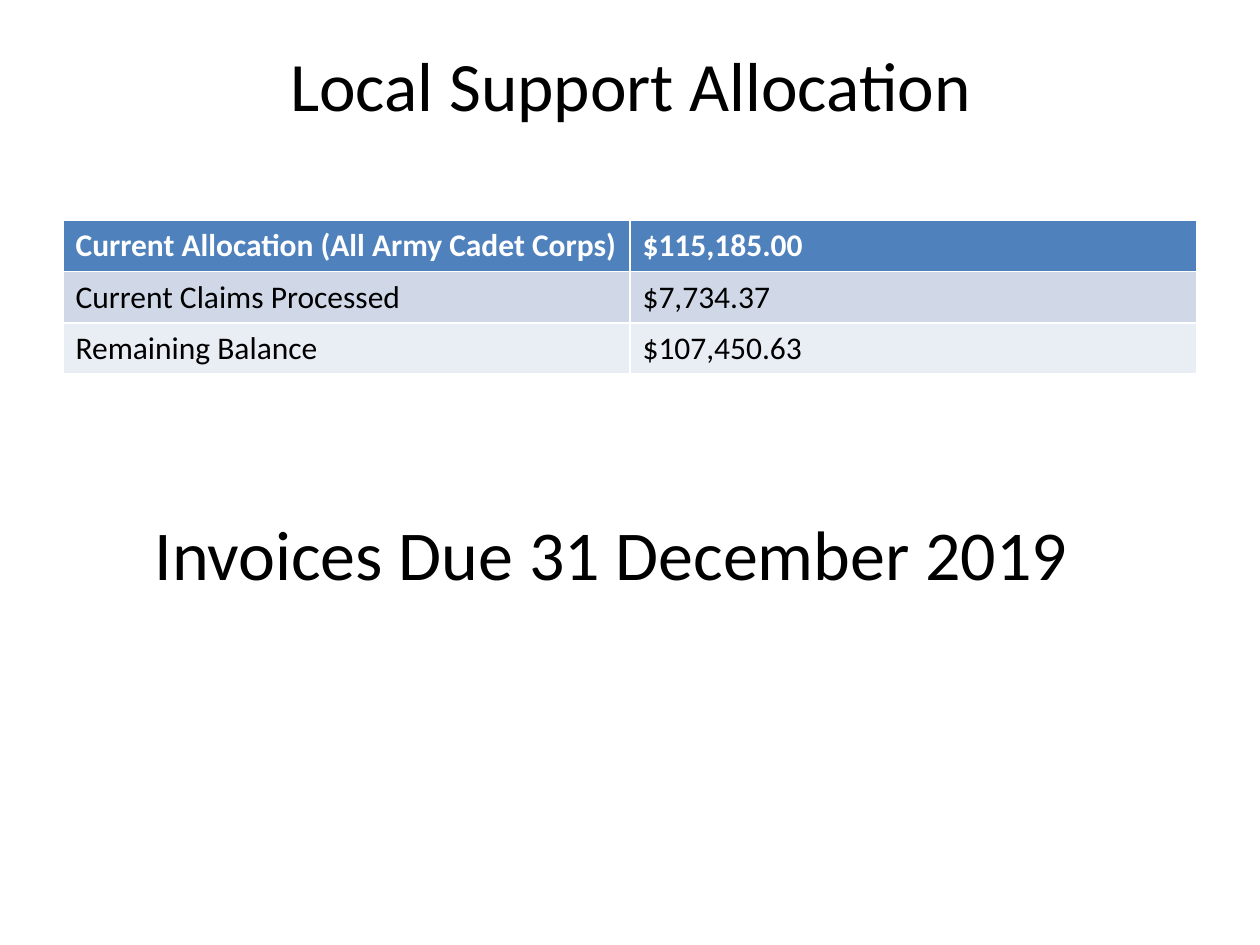
"""Build the Local Support Allocation slide with its balance table and invoice deadline."""
from pptx import Presentation
from pptx import util as u
from pptx.dml import color
from pptx.enum import text

COLORS = {
    "header": "4F81BD",
    "claims": "D0D8E8",
    "balance": "E9EDF4",
    "white": "FFFFFF",
    "black": "000000",
}
ROWS = [
    ("header", "white", ["Current Allocation (All Army Cadet Corps)", "$115,185.00"]),
    ("claims", "black", ["Current Claims Processed", "$7,734.37"]),
    ("balance", "black", ["Remaining Balance", "$107,450.63"]),
]


def add_text(paragraph, wording, size, color_name, bold=False):
    run = paragraph.add_run()
    run.text = wording
    run.font.name = "Calibri"
    run.font.size = u.Pt(size)
    run.font.bold = bold
    run.font.color.rgb = color.RGBColor.from_string(COLORS[color_name])


presentation = Presentation()
presentation.slide_width = u.Inches(10)
presentation.slide_height = u.Inches(7.5)
slide = presentation.slides.add_slide(presentation.slide_layouts[5])

title = slide.shapes.title
title.left, title.top = u.Inches(0.03), u.Inches(0.33)
title.width, title.height = u.Inches(9.83), u.Inches(0.67)
title.text_frame.vertical_anchor = text.MSO_ANCHOR.MIDDLE
title.text_frame.auto_size = text.MSO_AUTO_SIZE.NONE
title_paragraph = title.text_frame.paragraphs[0]
title_paragraph.alignment = text.PP_ALIGN.CENTER
add_text(title_paragraph, " Local Support Allocation", 39.6, "black")

table = slide.shapes.add_table(
    len(ROWS), 2, u.Inches(0.5), u.Inches(1.75), u.Inches(9), u.Inches(1.22)
).table
for row_index, (fill_name, color_name, wordings) in enumerate(ROWS):
    for column_index, wording in enumerate(wordings):
        cell = table.cell(row_index, column_index)
        cell.fill.solid()
        cell.fill.fore_color.rgb = color.RGBColor.from_string(COLORS[fill_name])
        add_text(cell.text_frame.paragraphs[0], wording, 18, color_name, row_index == 0)

deadline = slide.shapes.add_textbox(
    u.Inches(0.98), u.Inches(4), u.Inches(7.74), u.Inches(0.77)
)
deadline.text_frame.word_wrap = True
deadline.text_frame.auto_size = text.MSO_AUTO_SIZE.SHAPE_TO_FIT_TEXT
deadline_paragraph = deadline.text_frame.paragraphs[0]
deadline_paragraph.alignment = text.PP_ALIGN.CENTER
add_text(deadline_paragraph, "Invoices Due 31 December 2019", 40, "black")

presentation.save("out.pptx")
